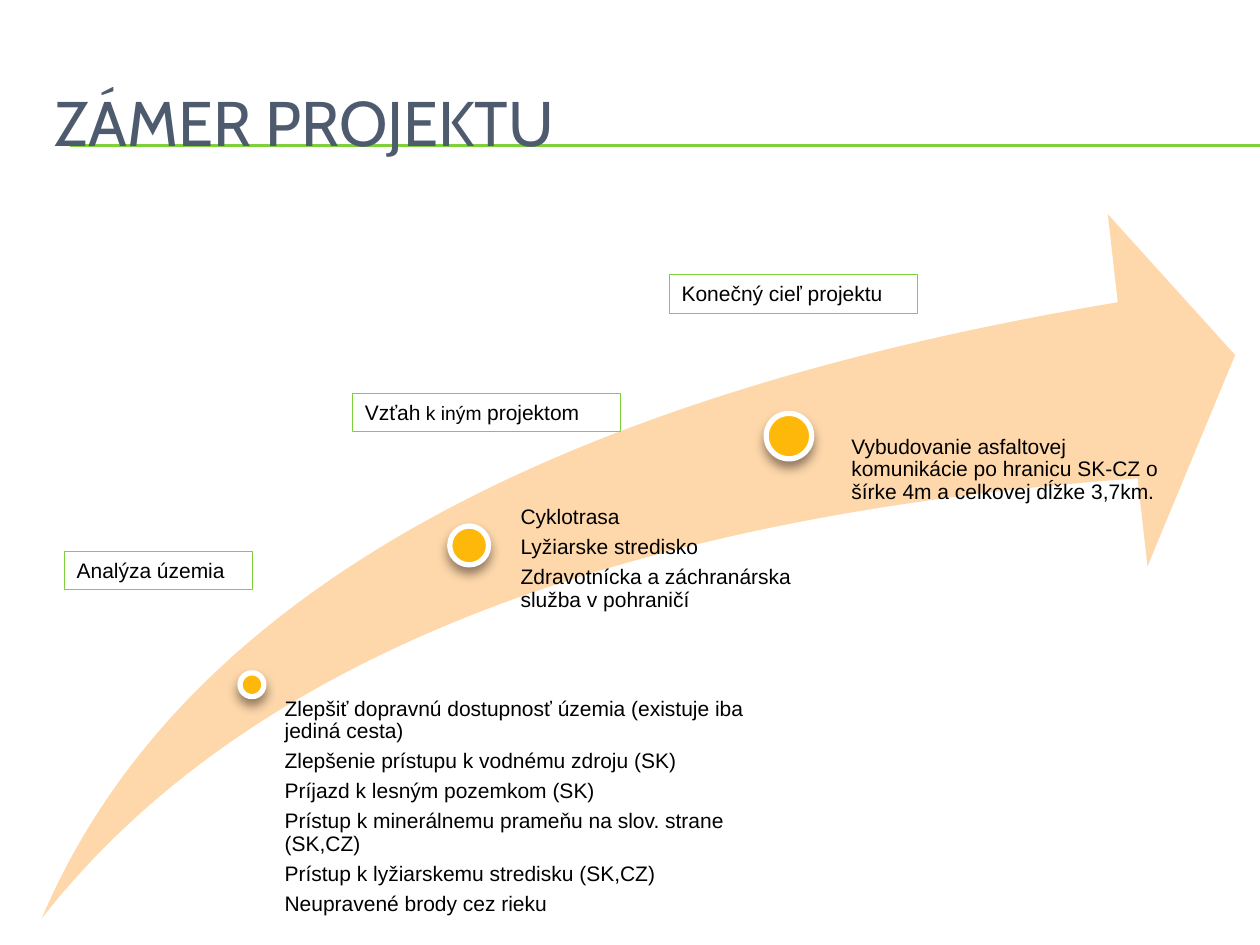
from lxml import etree
from pptx import Presentation
from pptx.dml.color import RGBColor
from pptx.enum import shapes, text
from pptx.oxml import parse_xml
from pptx.oxml.ns import nsdecls, qn
from pptx.util import Pt

COLORS = {"green": "7FD13B", "title": "4E5B6F", "swoosh": "FED8AB", "dot": "FEB80A",
          "white": "FFFFFF", "black": "000000", "shadow": "4E3B30"}


def rgb(name):
    return RGBColor.from_string(COLORS[name])


def style_font(font, size, name="Arial", color="black"):
    font.size, font.name = Pt(size), name
    font.color.rgb = rgb(color)


prs = Presentation()
prs.slide_width, prs.slide_height = Pt(720), Pt(540)
slide = prs.slides.add_slide(prs.slide_layouts[6])
parts = slide.shapes

# Double rule under the title
for y in (82.8, 83.5):
    rule = parts.add_connector(shapes.MSO_CONNECTOR.STRAIGHT, Pt(40.3), Pt(y), Pt(720), Pt(y))
    rule.line.color.rgb = rgb("green")
    rule.line.width = Pt(0.75)
    etree.SubElement(rule._element.spPr, qn("a:effectLst"))

title = parts.add_textbox(Pt(23.8), Pt(36), Pt(684), Pt(66.2)).text_frame
title.word_wrap = True
title.vertical_anchor = text.MSO_ANCHOR.MIDDLE
title.text = "ZÁMER PROJEKTU"
style_font(title.paragraphs[0].font, 36, "Cabin", "title")

swoosh = parts.add_shape(shapes.MSO_SHAPE.SWOOSH_ARROW, Pt(23.8), Pt(122.4), Pt(682), Pt(402.5))
swoosh.shadow.inherit = False
swoosh.fill.solid()
swoosh.fill.fore_color.rgb = rgb("swoosh")
swoosh.line.fill.background()

# Milestones: text box, dot (left, top, diameter), paragraphs
milestones = [
    ((156.2, 392.4, 304.6, 132.5), (137.2, 384.5, 13.6), [
        "Zlepšiť dopravnú dostupnosť územia (existuje iba jediná cesta)",
        "Zlepšenie prístupu k vodnému zdroju (SK)",
        "Príjazd k lesným pozemkom (SK)",
        "Prístup k minerálnemu prameňu na slov. strane (SK,CZ)",
        "Prístup k lyžiarskemu stredisku (SK,CZ)",
        "Neupravené brody cez rieku"]),
    ((291, 283, 170.6, 74.9), (257, 300.6, 22.2), [
        "Cyklotrasa",
        "Lyžiarske stredisko",
        "Zdravotnícka a záchranárska služba v pohraničí"]),
    ((480, 242.6, 195.8, 78.5), (437.8, 236.2, 26), [
        "Vybudovanie asfaltovej komunikácie po hranicu SK-CZ o šírke 4m "
        "a celkovej dĺžke 3,7km."]),
]
for box, (left, top, diameter), details in milestones:
    body = parts.add_textbox(*map(Pt, box)).text_frame
    body.word_wrap = True
    body.margin_left = body.margin_right = body.margin_top = body.margin_bottom = Pt(6.5)
    body.text = "\n".join(details)
    for paragraph in body.paragraphs:
        paragraph.line_spacing = 0.9
        paragraph.space_after = Pt(4.2)
        style_font(paragraph.font, 12)

    dot = parts.add_shape(shapes.MSO_SHAPE.OVAL, Pt(left), Pt(top), Pt(diameter), Pt(diameter))
    dot.fill.solid()
    dot.fill.fore_color.rgb = rgb("dot")
    dot.line.color.rgb = rgb("white")
    dot.line.width = Pt(3)
    dot._element.spPr.append(parse_xml(
        f'<a:effectLst {nsdecls("a")}><a:outerShdw blurRad="{Pt(6)}" dist="{Pt(4)}" '
        f'dir="5400000" rotWithShape="0"><a:srgbClr val="{COLORS["shadow"]}">'
        '<a:alpha val="60000"/></a:srgbClr></a:outerShdw></a:effectLst>'))

# Framed labels: box, runs with their sizes
labels = [
    ((36.7, 315.2, 107.8, 21.8), [("Analýza územia", 12)]),
    ((201.4, 224.8, 153.3, 21.8), [("Vzťah", 12), (" k iným ", 11), ("projektom", 12)]),
    ((382.4, 156.8, 142, 22.3), [("Konečný cieľ projektu", 12)]),
]
for box, runs in labels:
    label = parts.add_shape(shapes.MSO_SHAPE.RECTANGLE, *map(Pt, box))
    label.shadow.inherit = False
    label.fill.background()
    label.line.color.rgb = rgb("green")
    label.line.width = Pt(0.75)
    frame = label.text_frame
    frame.word_wrap = True
    frame.auto_size = text.MSO_AUTO_SIZE.SHAPE_TO_FIT_TEXT
    frame.vertical_anchor = text.MSO_ANCHOR.TOP
    paragraph = frame.paragraphs[0]
    paragraph.alignment = text.PP_ALIGN.LEFT
    style_font(paragraph.font, 12)
    for wording, size in runs:
        run = paragraph.add_run()
        run.text = wording
        style_font(run.font, size)

prs.save("out.pptx")
